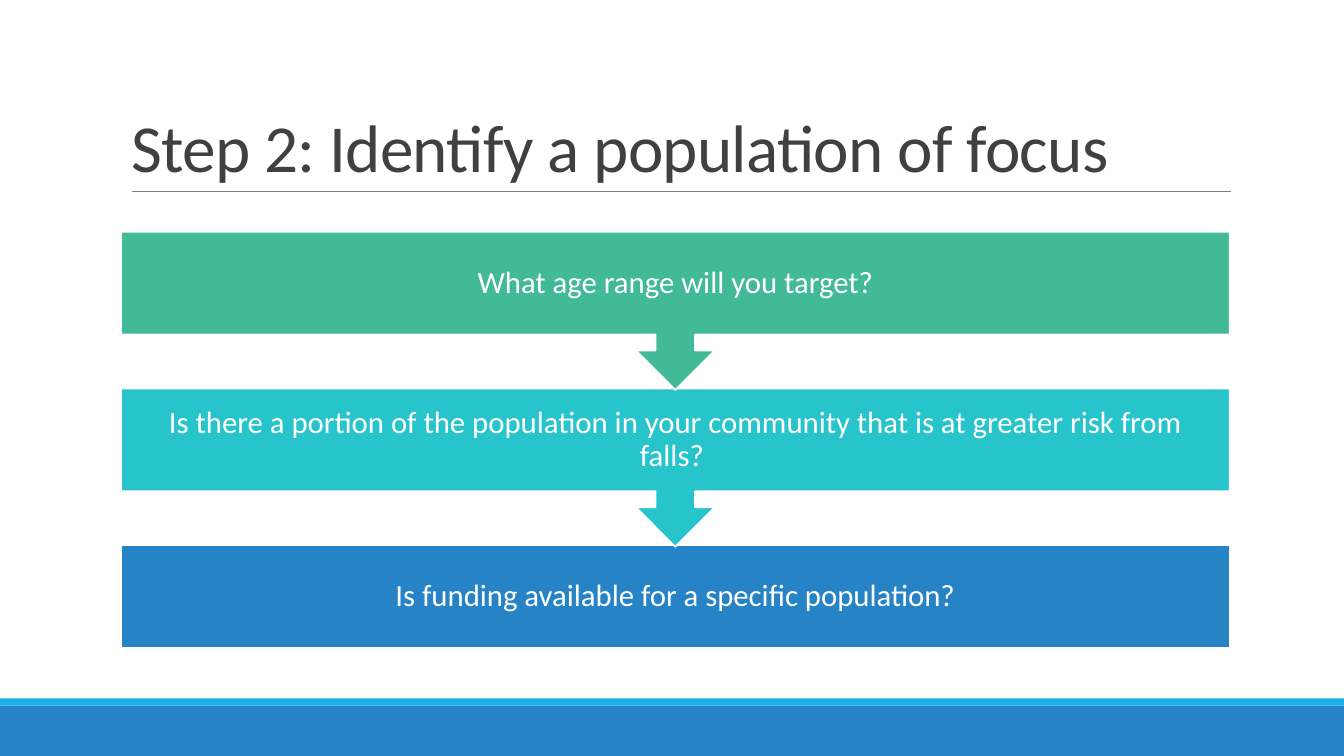
"""Build the slide on choosing a population of focus."""
from lxml import etree
from pptx import Presentation
from pptx.dml.color import RGBColor
from pptx.enum.shapes import MSO_CONNECTOR, MSO_SHAPE
from pptx.enum.text import MSO_ANCHOR, MSO_AUTO_SIZE, PP_ALIGN
from pptx.oxml.ns import qn
from pptx.util import Cm, Pt

RECT = MSO_SHAPE.RECTANGLE
CALLOUT = MSO_SHAPE.DOWN_ARROW_CALLOUT
LINE = MSO_CONNECTOR.STRAIGHT
LEFT, CENTER = PP_ALIGN.LEFT, PP_ALIGN.CENTER
MIDDLE, BOTTOM = MSO_ANCHOR.MIDDLE, MSO_ANCHOR.BOTTOM
NO_FIT = MSO_AUTO_SIZE.NONE

WHITE = RGBColor(0xFF, 0xFF, 0xFF)
DARK = RGBColor(0x40, 0x40, 0x40)
GRAY = RGBColor(0x80, 0x80, 0x80)
BLUE = RGBColor(0x26, 0x83, 0xC6)
SKY = RGBColor(0x1C, 0xAD, 0xE4)
TEAL = RGBColor(0x28, 0xC4, 0xCC)
GREEN = RGBColor(0x42, 0xBA, 0x97)


def write(shape, text, size, color, align, anchor, space, inset=None, track=0):
    frame = shape.text_frame
    frame.word_wrap = True
    frame.auto_size = NO_FIT
    frame.vertical_anchor = anchor
    if inset is not None:
        frame.margin_left = frame.margin_right = inset
        frame.margin_top = frame.margin_bottom = inset
    para = frame.paragraphs[0]
    para.alignment = align
    para.line_spacing = space
    run = para.add_run()
    run.text = text
    run.font.name = "Calibri"
    run.font.size = Pt(size)
    run.font.color.rgb = color
    run._r.get_or_add_rPr().set("spc", str(track))


def block(kind, left, top, width, height, fill):
    shape = slide.shapes.add_shape(kind, left, top, width, height)
    shape.shadow.inherit = False
    shape.fill.solid()
    shape.fill.fore_color.rgb = fill
    shape.line.fill.background()
    return shape


deck = Presentation()
deck.slide_width = Cm(33.87)
deck.slide_height = Cm(19.05)
slide = deck.slides.add_slide(deck.slide_layouts[5])

block(RECT, 0, Cm(17.78), deck.slide_width, Cm(1.27), BLUE)
block(RECT, 0, Cm(17.6), deck.slide_width, Cm(0.18), SKY)

rule = slide.shapes.add_connector(LINE, Cm(3.33), Cm(4.82), Cm(31.01), Cm(4.82))
rule.line.color.rgb = GRAY
rule.line.width = Pt(0.5)
etree.SubElement(rule._element.spPr, qn("a:effectLst"))

title = slide.shapes.title
title.left, title.top = Cm(3.05), Cm(0.79)
title.width, title.height = Cm(27.94), Cm(4.03)
write(title, "Step 2: Identify a population of focus", size=48, color=DARK,
      align=LEFT, anchor=BOTTOM, space=0.85, track=-50)

steps = [
    (CALLOUT, 3.99, GREEN, "What age range will you target?"),
    (CALLOUT, 3.99, TEAL, "Is there a portion of the population in your "
     "community that is at greater risk from falls? "),
    (RECT, 2.59, BLUE, "Is funding available for a specific population?"),
]
for row, (kind, height, fill, text) in reversed(list(enumerate(steps))):
    step = block(kind, Cm(3.05), Cm(5.84 + row * 3.95), Cm(27.94), Cm(height), fill)
    step.line.color.rgb = WHITE
    step.line.width = Pt(1.25)
    write(step, text, size=22, color=WHITE, align=CENTER, anchor=MIDDLE,
          space=0.9, inset=Cm(0.43))

deck.save("out.pptx")
